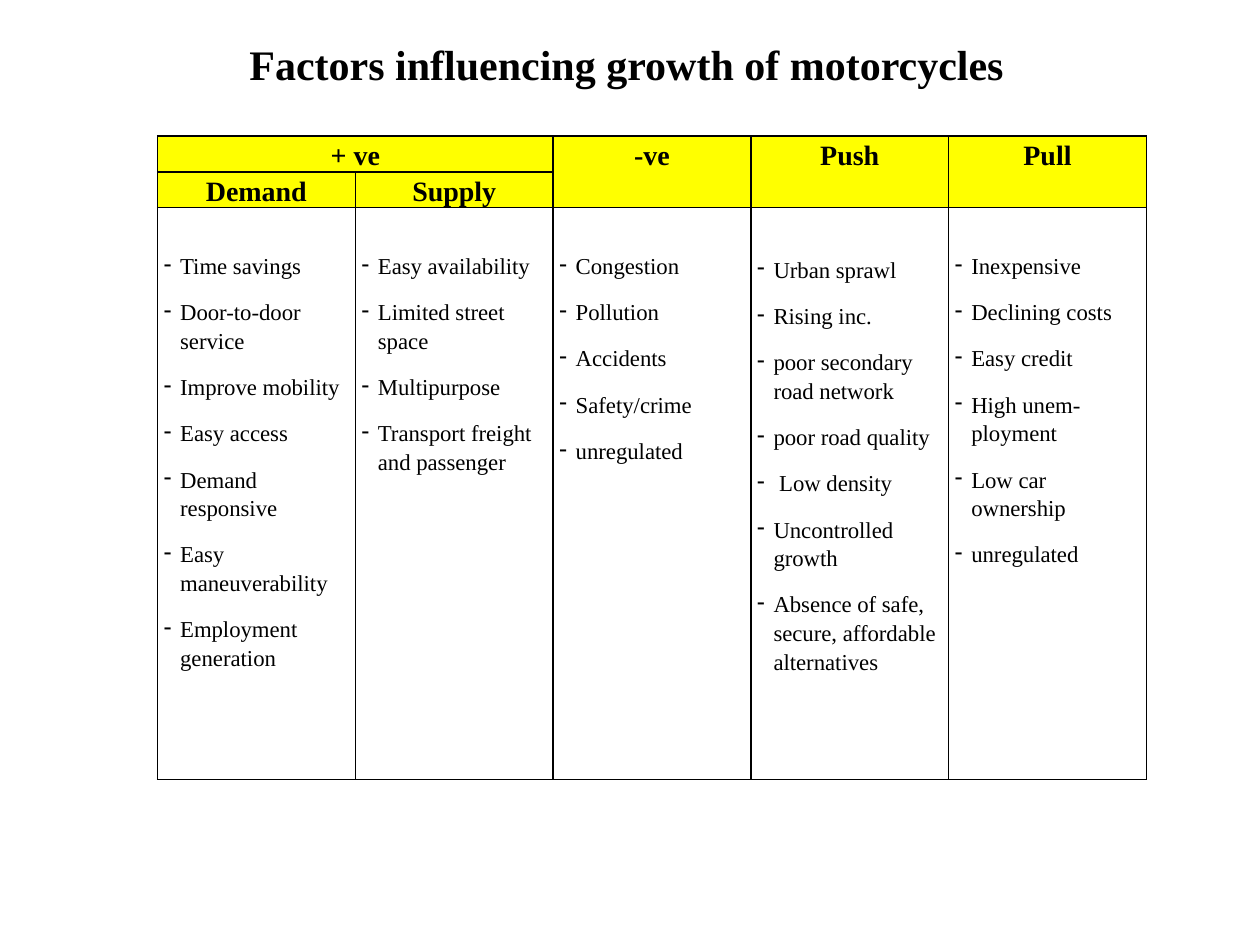
from dataclasses import dataclass

import pptx
import pptx.enum.text
import pptx.oxml.ns
import pptx.util
from lxml import etree
from pptx.dml.color import RGBColor

Inches, Pt = pptx.util.Inches, pptx.util.Pt
ALIGN, ANCHOR = pptx.enum.text.PP_ALIGN, pptx.enum.text.MSO_ANCHOR
FONT = "Times New Roman"
COLORS = {"text": "000000", "line": "000000", "header": "FFFF00"}
SLIDE_WIDTH, SLIDE_HEIGHT = 10, 7.5

# Table grid, in inches
TABLE_LEFT, TABLE_TOP, COLUMN_WIDTH = 1.25, 1.08, 1.57
ROW_HEIGHTS = [0.27, 0.27, 4.54]
CELL_INSET, HANGING = 0.05, 0.13


@dataclass(frozen=True)
class Header:
    text: str
    row: int
    column: int
    row_span: int = 1
    column_span: int = 1


@dataclass(frozen=True)
class Factors:
    items: tuple[str, ...]
    top_gap: float = 0.34


HEADERS = [
    Header("+ ve", 0, 0, column_span=2),
    Header("-ve", 0, 2, row_span=2),
    Header("Push", 0, 3, row_span=2),
    Header("Pull", 0, 4, row_span=2),
    Header("Demand", 1, 0),
    Header("Supply", 1, 1),
]
FACTORS = [
    Factors(("Time savings", "Door-to-door service", "Improve mobility",
             "Easy access", "Demand responsive", "Easy maneuverability",
             "Employment generation")),
    Factors(("Easy availability", "Limited street space", "Multipurpose",
             "Transport freight and passenger")),
    Factors(("Congestion", "Pollution", "Accidents", "Safety/crime",
             "unregulated")),
    Factors(("Urban sprawl", "Rising inc.", "poor secondary road network",
             "poor road quality", " Low density", "Uncontrolled growth",
             "Absence of safe, secure, affordable alternatives"), top_gap=0.37),
    Factors(("Inexpensive", "Declining costs", "Easy credit",
             "High unem-ployment", "Low car ownership", "unregulated")),
]


def write(frame, lines, *, size: float, bold: bool = False, align=ALIGN.LEFT,
          spacing: float = 1.0, after: float = 0, bullet: str = "") -> None:
    """Fill a text frame with one formatted paragraph per line."""
    for index, line in enumerate(lines):
        para = frame.add_paragraph() if index else frame.paragraphs[0]
        para.alignment = align
        para.line_spacing = spacing
        para.space_before, para.space_after = Pt(0), Pt(after)
        if bullet:
            properties = para._p.get_or_add_pPr()
            properties.set("marL", str(Inches(HANGING)))
            properties.set("indent", str(-Inches(HANGING)))
            mark = etree.SubElement(properties, pptx.oxml.ns.qn("a:buChar"))
            mark.set("char", bullet)
        span = para.add_run()
        span.text = line
        span.font.name, span.font.size, span.font.bold = FONT, Pt(size), bold
        span.font.color.rgb = RGBColor.from_string(COLORS["text"])


def set_borders(cell, width: float = 1) -> None:
    properties = cell._tc.get_or_add_tcPr()
    for index, side in enumerate(("lnL", "lnR", "lnT", "lnB")):
        border = etree.Element(pptx.oxml.ns.qn(f"a:{side}"), w=str(Pt(width)))
        fill = etree.SubElement(border, pptx.oxml.ns.qn("a:solidFill"))
        etree.SubElement(fill, pptx.oxml.ns.qn("a:srgbClr"), val=COLORS["line"])
        properties.insert(index, border)


def add_title(page, text: str) -> None:
    box = page.shapes.title
    box.left, box.top = Inches(1.71), Inches(0.27)
    box.width, box.height = Inches(6.58), Inches(0.47)
    frame = box.text_frame
    frame.word_wrap = True
    frame.auto_size = pptx.enum.text.MSO_AUTO_SIZE.NONE
    frame.vertical_anchor = ANCHOR.MIDDLE
    frame.margin_left = Inches(0.27)
    write(frame, [text], size=24, bold=True)


def add_factor_table(page) -> None:
    table = page.shapes.add_table(
        len(ROW_HEIGHTS), len(FACTORS), Inches(TABLE_LEFT), Inches(TABLE_TOP),
        Inches(COLUMN_WIDTH * len(FACTORS)), Inches(sum(ROW_HEIGHTS))).table
    table.first_row = table.horz_banding = False
    for column in table.columns:
        column.width = Inches(COLUMN_WIDTH)
    for row, height in zip(table.rows, ROW_HEIGHTS):
        row.height = Inches(height)

    # Plain bordered cells, yellow in the two header rows
    for row_index, row in enumerate(table.rows):
        for cell in row.cells:
            cell.margin_left = cell.margin_right = Inches(CELL_INSET)
            cell.margin_top = cell.margin_bottom = 0
            cell.vertical_anchor = ANCHOR.TOP
            if row_index < 2:
                cell.fill.solid()
                cell.fill.fore_color.rgb = RGBColor.from_string(COLORS["header"])
            else:
                cell.fill.background()
            set_borders(cell)

    # Headers
    for header in HEADERS:
        cell = table.cell(header.row, header.column)
        if header.row_span * header.column_span > 1:
            cell.merge(table.cell(header.row + header.row_span - 1,
                                  header.column + header.column_span - 1))
        write(cell.text_frame, [header.text], size=16, bold=True,
              align=ALIGN.CENTER, spacing=1.15, after=10)

    # Dashed lists
    for index, factors in enumerate(FACTORS):
        cell = table.cell(2, index)
        cell.margin_top = Inches(factors.top_gap)
        write(cell.text_frame, factors.items, size=13, spacing=1.15, after=10,
              bullet="-")


def main() -> None:
    deck = pptx.Presentation()
    deck.slide_width, deck.slide_height = Inches(SLIDE_WIDTH), Inches(SLIDE_HEIGHT)
    page = deck.slides.add_slide(deck.slide_layouts.get_by_name("Title Only"))
    add_factor_table(page)
    add_title(page, "Factors influencing growth of motorcycles")
    deck.save("out.pptx")


if __name__ == "__main__":
    main()
